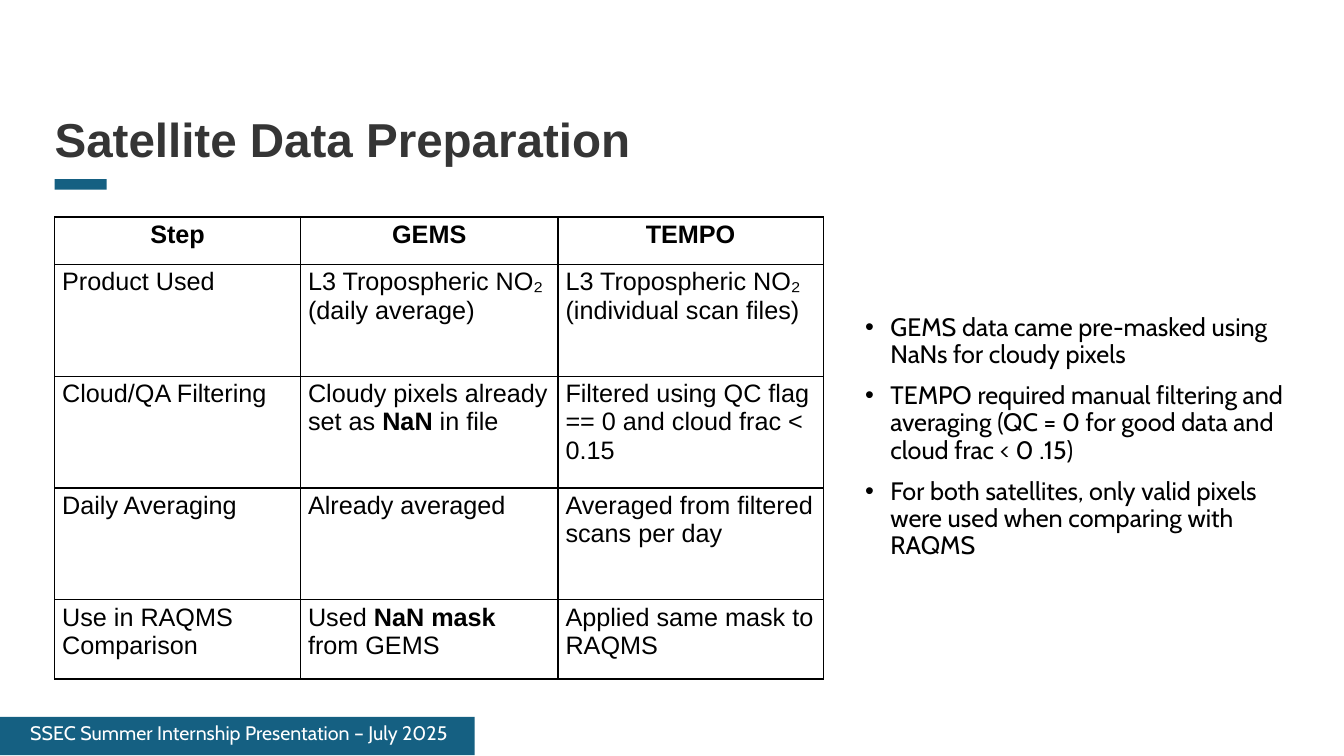
from lxml import etree
from pptx import Presentation
from pptx import util as u
from pptx.dml import color
from pptx.enum import shapes, text
from pptx.oxml import ns

Pt = u.Pt
COLORS = {"accent": "156082", "title": "353535", "text": "000000", "light": "FFFFFF"}
HEADING, BODY = "Arial", "Cabin"
STEPS = [
    ["Step", "GEMS", "TEMPO"],
    ["Product Used", "L3 Tropospheric NO₂ (daily average)",
     "L3 Tropospheric NO₂ (individual scan files)"],
    ["Cloud/QA Filtering", "Cloudy pixels already set as **NaN** in file",
     "Filtered using QC flag == 0 and cloud frac < 0.15"],
    ["Daily Averaging", "Already averaged", "Averaged from filtered scans per day"],
    ["Use in RAQMS Comparison", "Used **NaN mask** from GEMS", "Applied same mask to RAQMS"],
]
NOTES = [
    "GEMS data came pre-masked using NaNs for cloudy pixels",
    "TEMPO required manual filtering and averaging (QC = 0 for good data and cloud frac < 0 .15)",
    "For both satellites, only valid pixels were used when comparing with RAQMS",
]


def rgb(name):
    """Return the named colour."""
    return color.RGBColor.from_string(COLORS[name])


def add_run(p, words, size, font, ink, bold=False):
    """Add one formatted run to a paragraph."""
    r = p.add_run()
    r.text = words
    r.font.size, r.font.name, r.font.bold = Pt(size), font, bold
    r.font.color.rgb = rgb(ink)


def place(sp, box):
    """Move a shape to a box given in points."""
    sp.left, sp.top, sp.width, sp.height = map(Pt, box)


def set_frame(tf, insets, anchor):
    """Set insets (left, top, right, bottom), anchor and wrapping."""
    tf.margin_left, tf.margin_top, tf.margin_right, tf.margin_bottom = map(Pt, insets)
    tf.vertical_anchor = anchor
    tf.word_wrap = True
    tf.auto_size = text.MSO_AUTO_SIZE.NONE


def add_bar(s, box):
    """Add a plain accent rectangle."""
    sp = s.shapes.add_shape(shapes.MSO_SHAPE.RECTANGLE, *map(Pt, box))
    sp.shadow.inherit = False
    sp.fill.solid()
    sp.fill.fore_color.rgb = rgb("accent")
    sp.line.fill.background()
    return sp


def add_heading(s, box):
    """Fill the title and set the accent bar below it."""
    left, top, width, height = box
    sp = s.shapes.title
    place(sp, box)
    set_frame(sp.text_frame, (0, 3.6, 7.2, 0), text.MSO_ANCHOR.BOTTOM)
    p = sp.text_frame.paragraphs[0]
    p.alignment, p.line_spacing = text.PP_ALIGN.LEFT, 0.9
    add_run(p, "Satellite Data Preparation", 34, HEADING, "title", True)
    add_bar(s, (left, top + height + 8, 37.2, 7.4))


def set_borders(cell):
    """Draw thin lines on all four sides of a cell."""
    tcPr = cell._tc.get_or_add_tcPr()
    for side in ("a:lnL", "a:lnR", "a:lnT", "a:lnB"):
        ln = etree.SubElement(tcPr, ns.qn(side), w=str(Pt(1)))
        fill = etree.SubElement(ln, ns.qn("a:solidFill"))
        etree.SubElement(fill, ns.qn("a:srgbClr"), val=COLORS["text"])


def add_steps(s, box):
    """Add the table of preparation steps."""
    left, top, width, height = box
    table = s.shapes.add_table(len(STEPS), len(STEPS[0]), *map(Pt, box)).table
    for column, share in zip(table.columns, (0.32, 0.335, 0.345)):
        column.width = Pt(round(width * share, 2))
    for row, share in zip(table.rows, (0.1025, 0.242, 0.242, 0.242, 0.1715)):
        row.height = Pt(round(height * share, 2))
    for i, row in enumerate(STEPS):
        for j, words in enumerate(row):
            cell = table.cell(i, j)
            set_borders(cell)
            cell.fill.background()
            cell.margin_left = cell.margin_right = Pt(5.4)
            cell.margin_top = cell.margin_bottom = Pt(2.7)
            p = cell.text_frame.paragraphs[0]
            p.alignment = text.PP_ALIGN.LEFT if i else text.PP_ALIGN.CENTER
            for k, part in enumerate(words.split("**")):
                add_run(p, part, 18, HEADING, "text", i == 0 or k % 2 == 1)


def add_notes(s, box):
    """Fill the body placeholder with the bulleted list."""
    sp = s.placeholders[1]
    place(sp, box)
    tf = sp.text_frame
    set_frame(tf, (0, 3.6, 7.2, 3.6), text.MSO_ANCHOR.TOP)
    for i, words in enumerate(NOTES):
        p = tf.add_paragraph() if i else tf.paragraphs[0]
        pPr = p._p.get_or_add_pPr()
        pPr.set("marL", str(Pt(18)))
        pPr.set("indent", str(Pt(-18)))
        etree.SubElement(pPr, ns.qn("a:buFont"), typeface="Arial")
        etree.SubElement(pPr, ns.qn("a:buChar"), char="•")
        p.line_spacing = 0.9
        p.space_before = Pt(10 if i else 0)
        add_run(p, words, 18, BODY, "text")


def add_footer(s, box):
    """Add the footer band with the event name."""
    sp = add_bar(s, box)
    set_frame(sp.text_frame, (21.6, 5, 14.4, 7.2), text.MSO_ANCHOR.MIDDLE)
    p = sp.text_frame.paragraphs[0]
    p.alignment, p.line_spacing = text.PP_ALIGN.LEFT, 0.9
    add_run(p, "SSEC Summer Internship Presentation – July 2025", 14, BODY, "light")


def main():
    """Build and save the slide."""
    prs = Presentation()
    prs.slide_width, prs.slide_height = Pt(960), Pt(540)
    s = prs.slides.add_slide(prs.slide_layouts[1])
    margin = 39
    add_heading(s, (margin, 36, 840, 84))
    add_notes(s, (618, 221, 314.6, 258.5))
    add_steps(s, (margin, 155, 549, 330))
    add_footer(s, (0, 512, 339, 27.5))
    prs.save("out.pptx")


if __name__ == "__main__":
    main()
